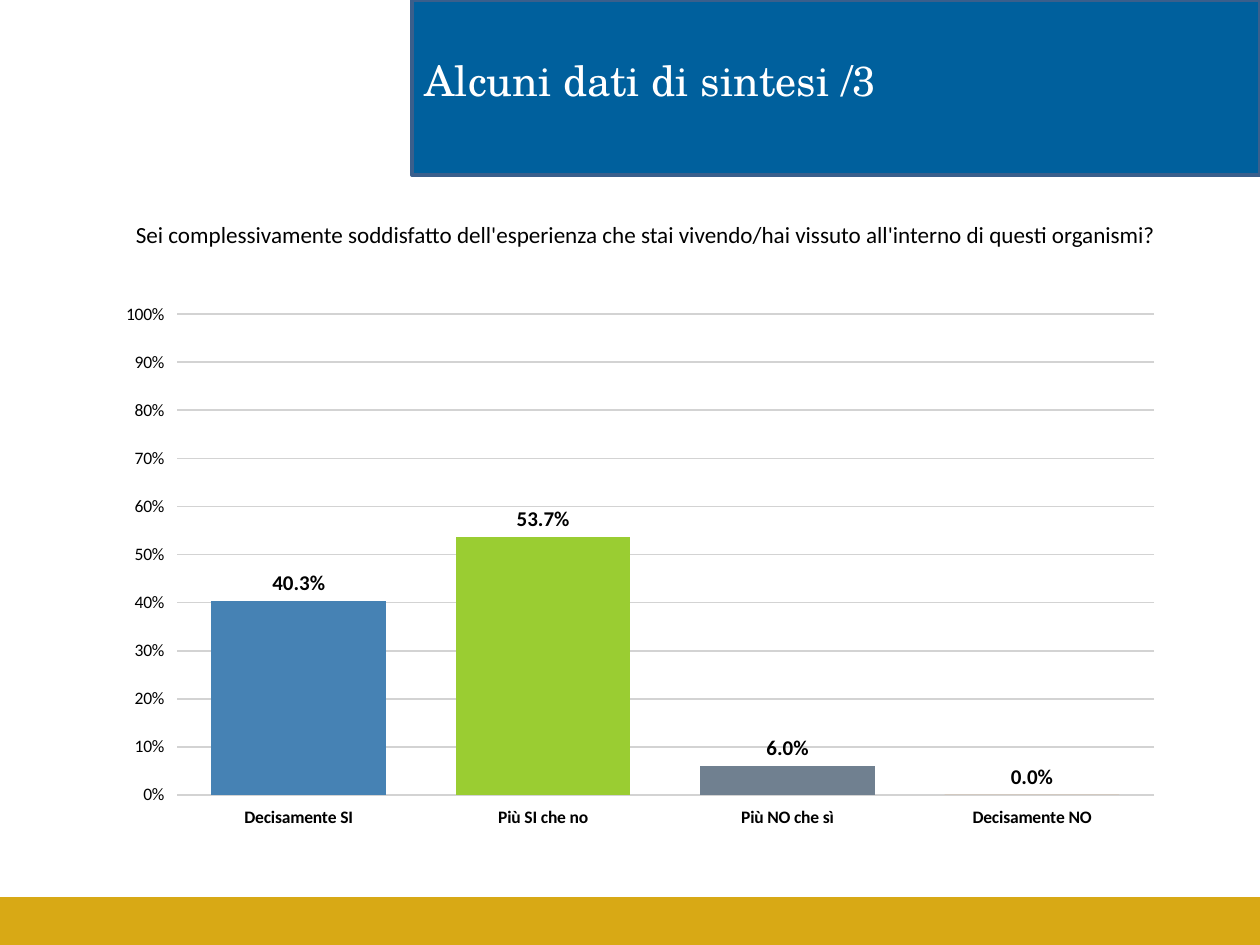
from pptx import Presentation
from pptx.chart.data import CategoryChartData
from pptx.dml.color import RGBColor
from pptx.enum.chart import XL_CHART_TYPE, XL_LABEL_POSITION
from pptx.enum.shapes import MSO_SHAPE
from pptx.enum.text import MSO_ANCHOR, PP_ALIGN
from pptx.util import Inches, Pt

COLUMNS = XL_CHART_TYPE.COLUMN_CLUSTERED
ABOVE_BAR = XL_LABEL_POSITION.OUTSIDE_END
RECTANGLE = MSO_SHAPE.RECTANGLE
TOP = MSO_ANCHOR.TOP
LEFT = PP_ALIGN.LEFT
TITLE_ONLY = 5

ANSWERS = [
    ("Decisamente SI", 0.403, "4682B4"),
    ("Più SI che no", 0.537, "9ACD32"),
    ("Più NO che sì", 0.06, "708090"),
    ("Decisamente NO", 0, "CD853F"),
]


def rgb(hex_color):
    return RGBColor.from_string(hex_color)


class SlideBuilder:
    heading_font = "TeX Gyre Schola"
    body_font = "Calibri"
    black = "000000"
    white = "FFFFFF"
    blue = "00609D"
    blue_edge = "3A5F8C"
    gold = "D8A915"
    grid = "D3D3D3"

    def __init__(self, slide):
        self.slide = slide

    def style_font(self, font, size, color, name=None, bold=False):
        font.name = name or self.body_font
        font.size = Pt(size)
        font.bold = bold
        font.color.rgb = rgb(color)

    def fill_text(self, shape, text, size, color, font_name):
        frame = shape.text_frame
        frame.text = text
        frame.word_wrap = True
        frame.vertical_anchor = TOP
        paragraph = frame.paragraphs[0]
        paragraph.alignment = LEFT
        self.style_font(paragraph.runs[0].font, size, color, font_name)

    def band(self, left, top, width, height, fill, edge=None):
        """Add a decorative rectangle behind everything else."""
        band = self.slide.shapes.add_shape(
            RECTANGLE, Inches(left), Inches(top), Inches(width), Inches(height))
        band.shadow.inherit = False
        band.fill.solid()
        band.fill.fore_color.rgb = rgb(fill)
        if edge:
            band.line.color.rgb = rgb(edge)
            band.line.width = Pt(2)
        else:
            band.line.fill.background()
        self.slide.shapes._spTree.insert(2, band._element)

    def title(self, text, left, top, width, height):
        title = self.slide.shapes.title
        title.left, title.top = Inches(left), Inches(top)
        title.width, title.height = Inches(width), Inches(height)
        self.fill_text(title, text, 24, self.white, self.heading_font)

    def text(self, text, left, top, width, height, size):
        box = self.slide.shapes.add_textbox(
            Inches(left), Inches(top), Inches(width), Inches(height))
        self.fill_text(box, text, size, self.black, self.body_font)

    def column_chart(self, answers, left, top, width, height):
        data = CategoryChartData()
        data.categories = [label for label, _, _ in answers]
        data.add_series("Series 1", [share for _, share, _ in answers])
        chart = self.slide.shapes.add_chart(
            COLUMNS, Inches(left), Inches(top), Inches(width), Inches(height),
            data).chart
        chart.has_legend = False
        chart.has_title = False
        self.style_font(chart.font, 18, self.black)
        self.style_axes(chart)

        plot = chart.plots[0]
        plot.gap_width = 40
        plot.vary_by_categories = False
        series = plot.series[0]
        series.format.fill.solid()
        series.format.fill.fore_color.rgb = rgb(answers[0][2])
        for index, (_, _, color) in enumerate(answers):
            fill = series.points[index].format.fill
            fill.solid()
            fill.fore_color.rgb = rgb(color)

        labels = series.data_labels
        labels.show_value = True
        labels.number_format = "0.0%"
        labels.number_format_is_linked = False
        labels.position = ABOVE_BAR
        self.style_font(labels.font, 12, self.black, bold=True)

    def style_axes(self, chart):
        categories, shares = chart.category_axis, chart.value_axis
        for axis in (categories, shares):
            axis.format.line.fill.background()
            self.style_font(axis.tick_labels.font, 10, self.black,
                            bold=axis is categories)
        shares.minimum_scale = 0
        shares.maximum_scale = 1
        shares.major_unit = 0.1
        shares.tick_labels.number_format = "0%"
        shares.tick_labels.number_format_is_linked = False
        shares.has_major_gridlines = True
        gridline = shares.major_gridlines.format.line
        gridline.color.rgb = rgb(self.grid)
        gridline.width = Pt(1)


def main():
    presentation = Presentation()
    presentation.slide_width = Inches(10)
    presentation.slide_height = Inches(7.5)
    layout = presentation.slide_layouts[TITLE_ONLY]
    builder = SlideBuilder(presentation.slides.add_slide(layout))

    builder.band(3.27, 0, 6.73, 1.39, builder.blue, builder.blue_edge)
    builder.band(0, 7.12, 10, 0.38, builder.gold)
    builder.title("Alcuni dati di sintesi /3", 3.27, 0.38, 6.73, 0.44)
    builder.column_chart(ANSWERS, 0.83, 2.33, 8.5, 4.32)
    builder.text(
        "Sei complessivamente soddisfatto dell'esperienza che stai vivendo/hai "
        "vissuto all'interno di questi organismi?",
        0.98, 1.7, 9.02, 0.44, size=13.2)

    presentation.save("out.pptx")


if __name__ == "__main__":
    main()
